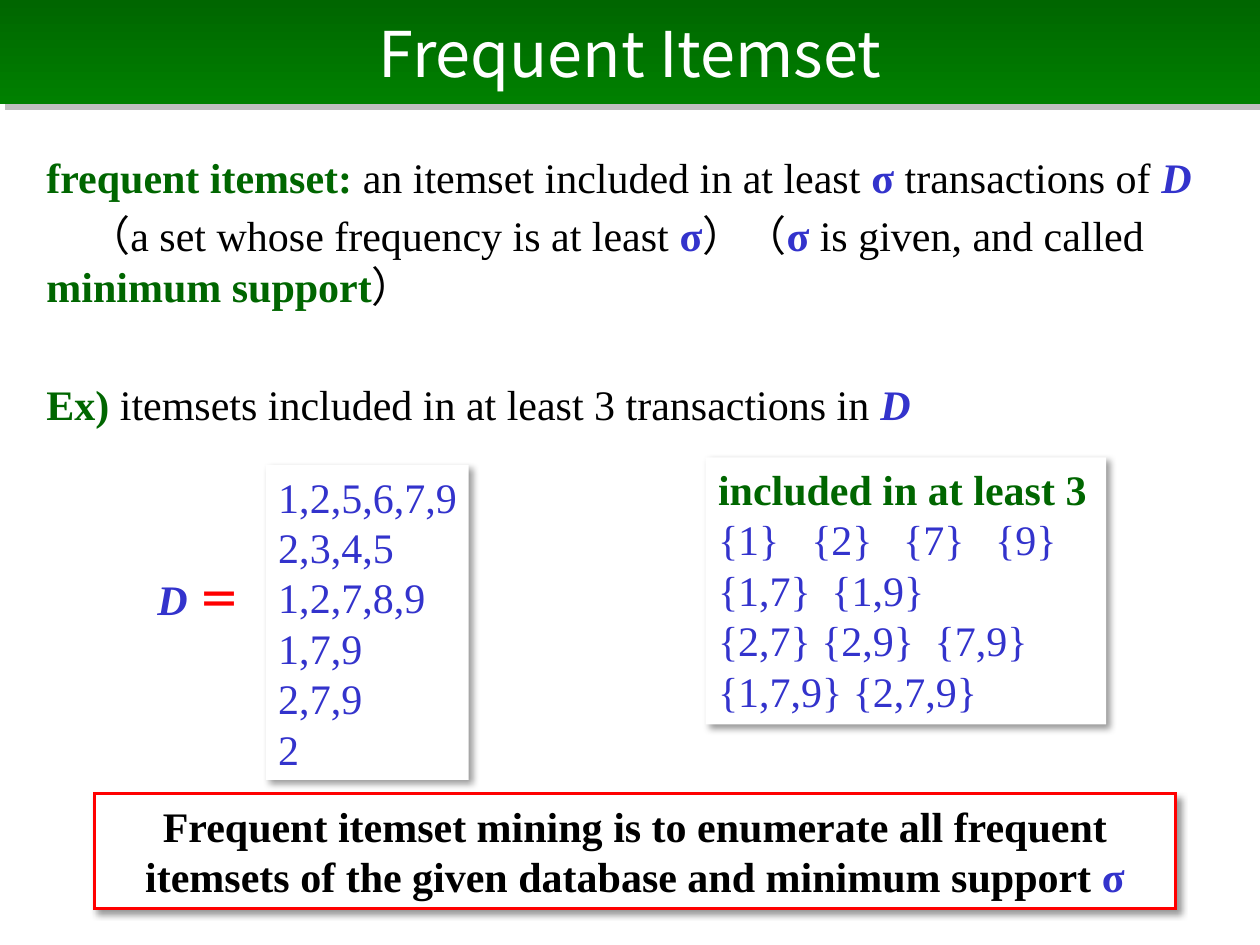
from lxml import etree
from pptx import Presentation
from pptx.dml.color import RGBColor
from pptx.enum import shapes, text
from pptx.oxml import ns
from pptx import util as u

GREEN, BLUE, BLACK, WHITE, RED = "006600", "3333CC", "000000", "FFFFFF", "FF0000"
SERIF, SANS = "Times New Roman", "Noto Sans CJK JP"


def color(value):
    return RGBColor.from_string(value)


def add_xml(parent, tag, **attributes):
    return etree.SubElement(parent, ns.qn(tag), attributes)


def term(words):
    return words, GREEN, True, False


def plain(words):
    return words, BLACK, False, False


def strong(words):
    return words, BLACK, True, False


def items(words):
    return words, BLUE, False, False


def symbol(words):
    return words, BLUE, True, False


def database(words):
    return words, BLUE, True, True


class SlideBuilder:
    def __init__(self, slide, font=SERIF, size=24):
        self.slide = slide
        self.font = font
        self.size = size

    def _write(self, shape, paragraphs, align, wrap, grow, gaps=(), tabs=()):
        frame = shape.text_frame
        frame.word_wrap = wrap
        frame.vertical_anchor = text.MSO_ANCHOR.TOP
        if grow:
            frame.auto_size = text.MSO_AUTO_SIZE.SHAPE_TO_FIT_TEXT
        for index, pieces in enumerate(paragraphs):
            paragraph = frame.paragraphs[0] if index == 0 else frame.add_paragraph()
            paragraph.alignment = align
            if gaps:
                paragraph.space_before = u.Pt(gaps[index])
            if tabs and tabs[index]:
                stops = add_xml(paragraph._p.get_or_add_pPr(), "a:tabLst")
                for stop in tabs[index]:
                    add_xml(stops, "a:tab", pos=str(u.Inches(stop)), algn="l")
            for words, hue, bold, italic in pieces:
                self._run(paragraph, words, hue, bold, italic)

    def _run(self, paragraph, words, hue, bold, italic, font=None, size=None):
        run = paragraph.add_run()
        run.text = words
        run.font.name = font or self.font
        run.font.size = u.Pt(size or self.size)
        run.font.bold = bold
        run.font.italic = italic
        run.font.color.rgb = color(hue)
        add_xml(run._r.get_or_add_rPr(), "a:ea", typeface=SANS)

    def _rectangle(self, place, hue, opacity, blur, distance):
        shape = self.slide.shapes.add_shape(
            shapes.MSO_SHAPE.RECTANGLE, *map(u.Inches, place))
        shape.line.fill.background()
        shape.shadow.inherit = False
        effects = shape._element.spPr.find(ns.qn("a:effectLst"))
        shadow = add_xml(effects, "a:outerShdw", blurRad=str(u.Pt(blur)),
                         dist=str(u.Pt(distance)), dir="2700000",
                         algn="tl", rotWithShape="0")
        shade = add_xml(shadow, "a:srgbClr", val=hue)
        add_xml(shade, "a:alpha", val=str(opacity * 1000))
        return shape

    def banner(self, place, words, stops, size):
        shape = self._rectangle(place, "808080", 50, 0, 4.2)
        shape.fill.gradient()
        shape.fill.gradient_angle = 270
        for stop, hue in zip(shape.fill.gradient_stops, stops):
            stop.color.rgb = color(hue)
        frame = shape.text_frame
        frame.word_wrap = True
        frame.vertical_anchor = text.MSO_ANCHOR.MIDDLE
        title = frame.paragraphs[0]
        title.alignment = text.PP_ALIGN.CENTER
        self._run(title, words, WHITE, False, False, SANS, size)

    def card(self, place, paragraphs, align=text.PP_ALIGN.LEFT, border=None,
             tabs=(), right_inset=0.1):
        shape = self._rectangle(place, BLACK, 40, 4, 3)
        shape.fill.solid()
        shape.fill.fore_color.rgb = color(WHITE)
        shape.text_frame.margin_right = u.Inches(right_inset)
        if border:
            shape.line.color.rgb = color(border)
            shape.line.width = u.Pt(1.5)
            add_xml(shape.line._get_or_add_ln(), "a:miter", lim="800000")
        self._write(shape, paragraphs, align, True, True, tabs=tabs)

    def textbox(self, place, paragraphs, wrap=True, grow=False, gaps=()):
        box = self.slide.shapes.add_textbox(*map(u.Inches, place))
        self._write(box, paragraphs, text.PP_ALIGN.LEFT, wrap, grow, gaps)


def main():
    deck = Presentation()
    deck.slide_width, deck.slide_height = u.Inches(10), u.Inches(7.5)
    builder = SlideBuilder(deck.slides.add_slide(deck.slide_layouts[6]))

    builder.banner((0, 0, 10, 0.83), "Frequent Itemset", (GREEN, "008000"), 36)

    definition = [
        [term("frequent itemset: "), plain("an itemset included in at least "),
         symbol("σ "), plain("transactions of "), database("D")],
        [plain("　（a set whose frequency is at least "), symbol("σ"),
         plain("）（"), symbol("σ "), plain("is given, and called "),
         term("minimum support"), plain("）")],
        [term("Ex) "), plain("itemsets included in at least 3 transactions in "),
         database("D")],
    ]
    builder.textbox((0.27, 1.15, 9.5, 2.13), definition, gaps=(4.8, 4.8, 38.6))

    transactions = ("1,2,5,6,7,9", "2,3,4,5", "1,2,7,8,9", "1,7,9", "2,7,9", "2")
    builder.card((2.11, 3.69, 1.61, 2.5),
                 [[items(row)] for row in transactions], right_inset=0)
    builder.textbox((1.15, 4.5, 0.94, 0.5),
                    [[database("D "), ("＝", RED, True, False)]],
                    wrap=False, grow=True)

    itemsets = ("{1}\t{2}\t{7}\t{9}", "{1,7}\t{1,9}",
                "{2,7} {2,9}\t{7,9}", "{1,7,9} {2,7,9}")
    builder.card((5.6, 3.63, 3.18, 2.12),
                 [[term("included in at least 3")]] + [[items(row)] for row in itemsets],
                 tabs=((), (0.74, 1.47, 2.2), (0.9,), (1.72,), ()))

    builder.card((0.75, 6.3, 8.58, 0.91),
                 [[strong("Frequent itemset mining is to enumerate all frequent "
                          "itemsets of the given database and minimum support "),
                   symbol("σ")]],
                 align=text.PP_ALIGN.CENTER, border=RED)

    deck.save("out.pptx")


if __name__ == "__main__":
    main()
